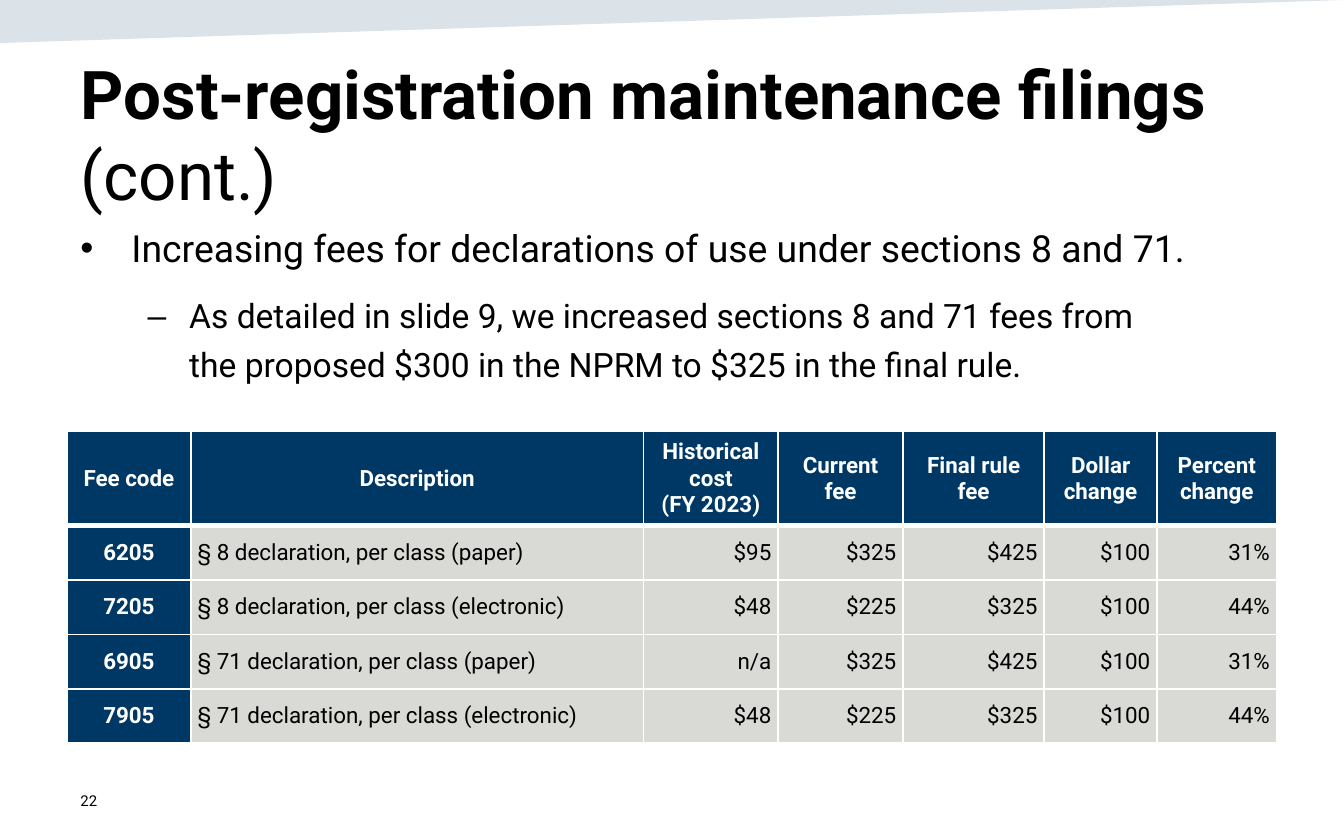
"""Build the slide on post-registration maintenance filing fees."""
from lxml.etree import SubElement
from pptx import Presentation
from pptx.dml.color import RGBColor
from pptx.enum.text import MSO_ANCHOR, MSO_AUTO_SIZE, PP_ALIGN
from pptx.oxml.ns import qn
from pptx.util import Inches, Pt

FONT = "Roboto"
COLORS = {"navy": "003865", "wedge": "164469", "gray": "D9D9D6", "white": "FFFFFF", "black": "000000"}
WIDTH, HEIGHT = 10, 6.25
MARGIN = 0.05 * WIDTH
CONTENT = WIDTH - 2 * MARGIN
HARD_SPACE = chr(160)

TITLE = [("Post-registration maintenance filings ", True), ("(cont.)", False)]
BULLETS = [
    ("Increasing fees for declarations of use under sections 8 and 71.", "•", 20, 0.38, 0.38, 0),
    (f"As detailed in slide 9, we increased sections 8 and 71 fees{HARD_SPACE}from "
     f"the{HARD_SPACE}proposed $300 in the{HARD_SPACE}NPRM to $325 in the final rule.",
     "–", 18, 0.81, 0.31, 9),
]
PAGE_NUMBER = "22"
HEADERS = ["Fee code", "Description", "Historical cost\n(FY 2023)", "Current fee",
           "Final rule fee", "Dollar change", "Percent change"]
FEES = [
    ("6205", "§ 8 declaration, per class (paper)", "$95", "$325", "$425", "$100", "31%"),
    ("7205", "§ 8 declaration, per class (electronic)", "$48", "$225", "$325", "$100", "44%"),
    ("6905", "§ 71 declaration, per class (paper)", "n/a", "$325", "$425", "$100", "31%"),
    ("7905", "§ 71 declaration, per class (electronic)", "$48", "$225", "$325", "$100", "44%"),
]
COLUMN_WIDTHS = [0.92, 3.37, 1, 0.93, 1.05, 0.84, 0.89]
HEADER_HEIGHT, BODY_HEIGHT = 0.67, 1.62


def color(name):
    return RGBColor.from_string(COLORS[name])


def set_font(font, size, name="black", bold=False):
    font.name, font.size, font.bold = FONT, Pt(size), bold
    font.color.rgb = color(name)


def place(shape, left, top, width, height):
    shape.left, shape.top = Inches(left), Inches(top)
    shape.width, shape.height = Inches(width), Inches(height)


def add_wedge(page):
    builder = page.shapes.build_freeform(0, 0, scale=1)
    builder.add_line_segments([(0, Inches(0.32)), (Inches(WIDTH), 0)])
    wedge = builder.convert_to_shape()
    wedge.shadow.inherit = False
    wedge.line.fill.background()
    wedge.fill.solid()
    wedge.fill.fore_color.rgb = color("wedge")
    tint = next(wedge.fill._xPr.iter(qn("a:srgbClr")))
    SubElement(tint, qn("a:alpha"), val="15000")


def add_title(page):
    title = page.shapes.title
    place(title, MARGIN, 0.34, CONTENT, 1.04)
    frame = title.text_frame
    frame.auto_size = MSO_AUTO_SIZE.NONE
    frame.vertical_anchor = MSO_ANCHOR.TOP
    para = frame.paragraphs[0]
    para.alignment = PP_ALIGN.LEFT
    for text, bold in TITLE:
        span = para.add_run()
        span.text = text
        set_font(span.font, 36, bold=bold)


def add_text_box(page, left, top, width, height):
    box = page.shapes.add_textbox(0, 0, 0, 0)
    place(box, left, top, width, height)
    box.text_frame.word_wrap = True
    return box.text_frame


def add_bullets(page):
    frame = add_text_box(page, MARGIN, 0.25 * HEIGHT, CONTENT, 1.4)
    for index, (text, mark, size, indent, hang, before) in enumerate(BULLETS):
        para = frame.paragraphs[0] if index == 0 else frame.add_paragraph()
        para.text = text
        para.level = index
        para.line_spacing = 1.2
        para.space_before = Pt(before)
        properties = para._p.get_or_add_pPr()
        properties.set("marL", str(Inches(indent)))
        properties.set("indent", str(-Inches(hang)))
        SubElement(properties, qn("a:buFont"), typeface="Arial")
        SubElement(properties, qn("a:buChar"), char=mark)
        set_font(para.font, size)


def set_borders(cell, bottom):
    properties = cell._tc.get_or_add_tcPr()
    for side, width in (("L", 1), ("R", 1), ("T", 1), ("B", bottom)):
        line = SubElement(properties, qn(f"a:ln{side}"), w=str(Pt(width)))
        fill = SubElement(line, qn("a:solidFill"))
        SubElement(fill, qn("a:srgbClr"), val=COLORS["white"])


def fill_cell(cell, text, row, column):
    header = row == 0
    accent = header or column == 0
    set_borders(cell, 3 if header else 1)
    cell.fill.solid()
    cell.fill.fore_color.rgb = color("navy" if accent else "gray")
    cell.vertical_anchor = MSO_ANCHOR.MIDDLE
    cell.margin_left = cell.margin_right = cell.margin_top = cell.margin_bottom = Inches(0.05)
    cell.text = text
    for para in cell.text_frame.paragraphs:
        if accent:
            para.alignment = PP_ALIGN.CENTER
        else:
            para.alignment = PP_ALIGN.LEFT if column == 1 else PP_ALIGN.RIGHT
        set_font(para.font, 12, "white" if accent else "black", accent)


def add_fee_table(page):
    rows = [HEADERS, *FEES]
    table = page.shapes.add_table(len(rows), len(HEADERS), Inches(MARGIN), Inches(3.21),
                                  Inches(CONTENT), Inches(HEADER_HEIGHT + BODY_HEIGHT)).table
    for column, width in zip(table.columns, COLUMN_WIDTHS):
        column.width = Inches(width)
    for index, values in enumerate(rows):
        table.rows[index].height = Inches(BODY_HEIGHT / len(FEES) if index else HEADER_HEIGHT)
        for column, text in enumerate(values):
            fill_cell(table.cell(index, column), text, index, column)


def add_page_number(page):
    frame = add_text_box(page, MARGIN, 5.79, CONTENT / 4, 0.33)
    frame.vertical_anchor = MSO_ANCHOR.MIDDLE
    frame.text = PAGE_NUMBER
    set_font(frame.paragraphs[0].font, 8)


def main():
    deck = Presentation()
    deck.slide_width, deck.slide_height = Inches(WIDTH), Inches(HEIGHT)
    page = deck.slides.add_slide(deck.slide_layouts[5])
    add_wedge(page)
    add_title(page)
    add_bullets(page)
    add_fee_table(page)
    add_page_number(page)
    deck.save("out.pptx")


if __name__ == "__main__":
    main()
